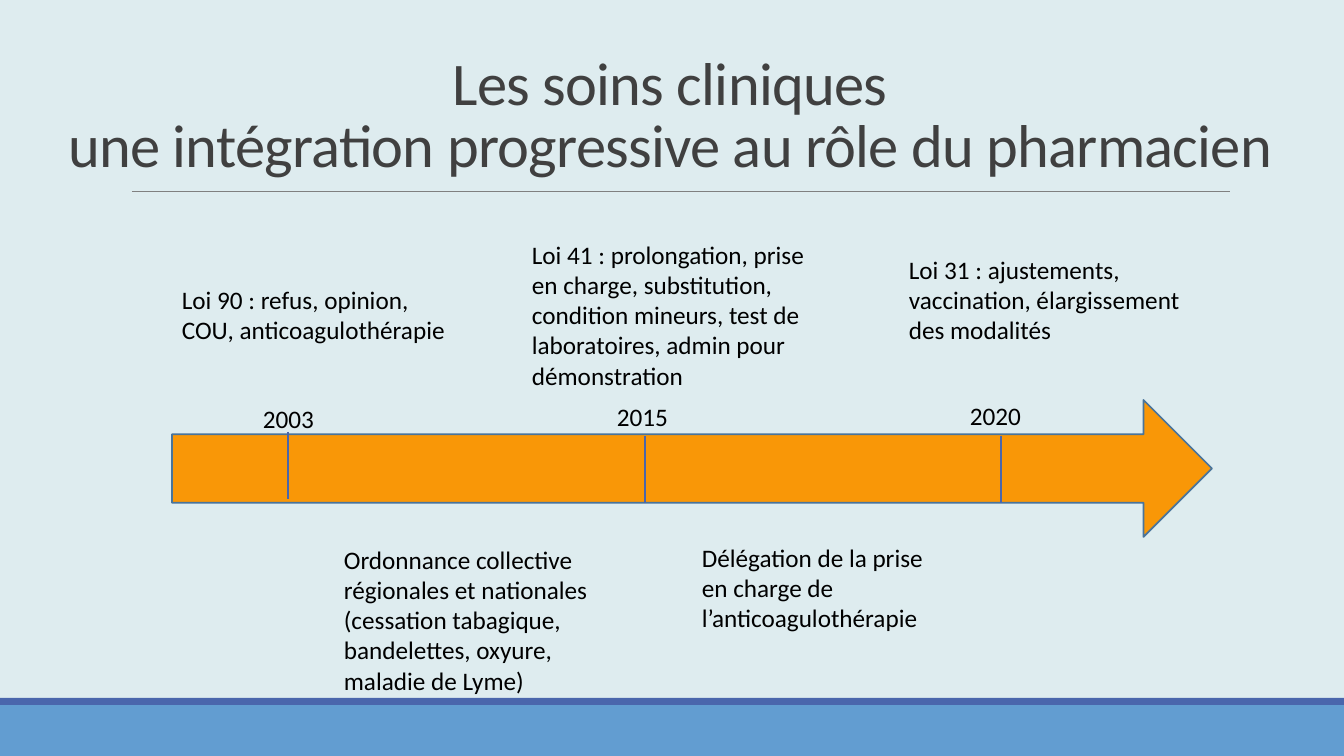
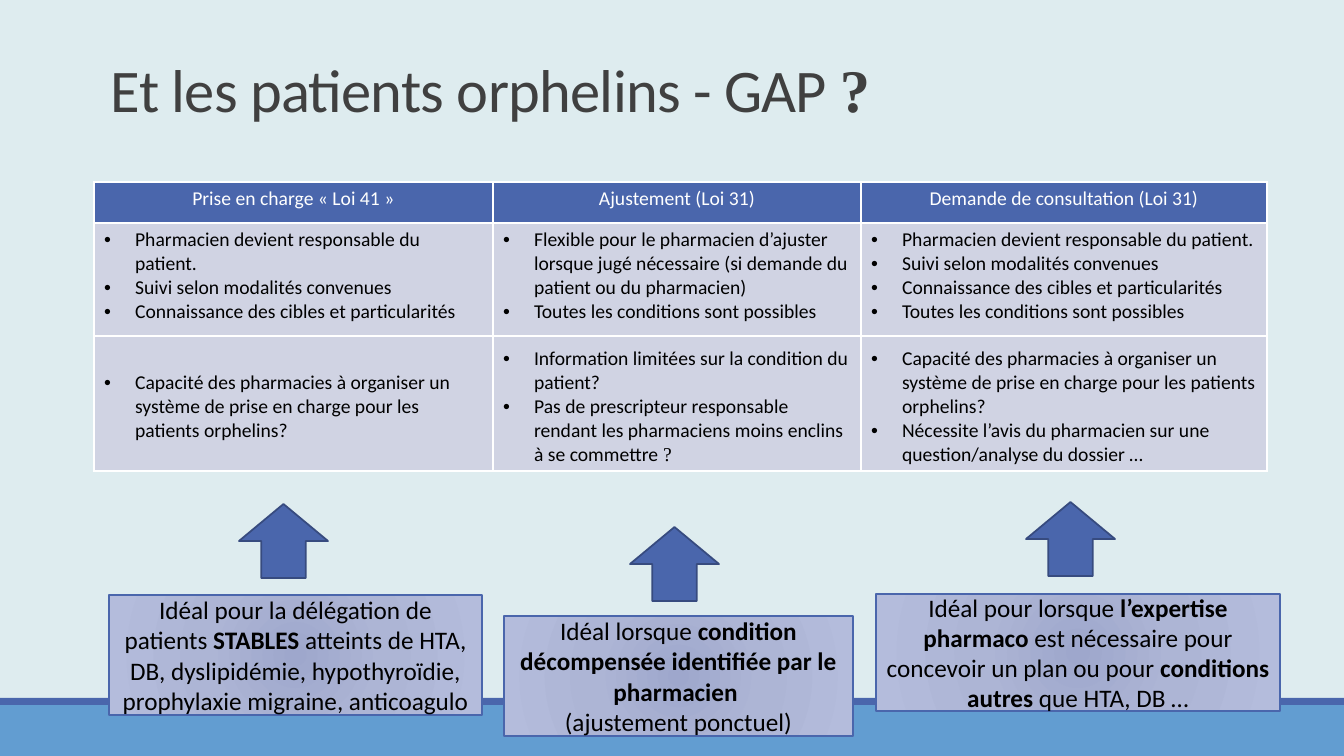
"""Build two slides on the growing clinical role of the pharmacist."""
from dataclasses import dataclass
from typing import NamedTuple

from pptx import Presentation
from pptx.dml.color import RGBColor
from pptx.enum.shapes import MSO_CONNECTOR, MSO_SHAPE
from pptx.enum.text import MSO_ANCHOR, PP_ALIGN
from pptx.oxml import parse_xml
from pptx.oxml.ns import nsdecls
from pptx.util import Emu, Pt

SCALE = 914400 / 100.8
WIDE, HIGH = 1344, 756
RECT, ROUND = MSO_SHAPE.RECTANGLE, MSO_SHAPE.ROUNDED_RECTANGLE
RIGHT, UP = MSO_SHAPE.RIGHT_ARROW, MSO_SHAPE.UP_ARROW
STRAIGHT = MSO_CONNECTOR.STRAIGHT
LEFT, MID = PP_ALIGN.LEFT, PP_ALIGN.CENTER
TOP, CENTER, BOTTOM = MSO_ANCHOR.TOP, MSO_ANCHOR.MIDDLE, MSO_ANCHOR.BOTTOM
SANS, SERIF = "Calibri", "Times New Roman"
BREAK = "\v"
INDENT = 31
BLANK = 17
HUES = {
    "back": "DEECEF", "band": "629DD1", "main": "4A66AC", "rule": "808080",
    "title": "404040", "text": "000000", "white": "FFFFFF", "cell": "D0D3E3",
    "time": "F99707", "rim": "49749B", "edge": "374B7F",
}
GLOW = ((0, "9EA7CC"), (45, "ADB5D5"), (100, "B4BCDC"))


class Box(NamedTuple):
    x: int
    y: int
    w: int
    h: int


class Run(NamedTuple):
    text: str
    bold: bool = False
    font: str = SANS


class Para(NamedTuple):
    runs: tuple
    gap: int = 0


@dataclass
class Note:
    box: Box
    text: str


@dataclass
class Year:
    text: str
    x: int
    y: int
    tick: int
    start: int


@dataclass
class Ideal:
    arrow: Box
    box: Box
    paras: tuple


@dataclass
class Column:
    width: int
    head: str
    items: tuple


NOTES = (
    Note(Box(172, 279, 299, 71), "Loi 90 : refus, opinion, COU, anticoagulothérapie"),
    Note(Box(522, 234, 299, 163), "Loi 41 : prolongation, prise en charge, substitution, "
         "condition mineurs, test de laboratoires, admin pour démonstration"),
    Note(Box(899, 249, 299, 102), "Loi 31 : ajustements, vaccination, élargissement des modalités"),
    Note(Box(334, 539, 274, 163), "Ordonnance collective régionales et nationales "
         "(cessation tabagique, bandelettes, oxyure, maladie de Lyme)"),
    Note(Box(692, 537, 254, 102), "Délégation de la prise en charge de l’anticoagulothérapie"),
)
YEARS = (
    Year("2003", 253, 398, 288, 432),
    Year("2015", 607, 396, 645, 436),
    Year("2020", 960, 395, 1001, 436),
)

OWNER = "Pharmacien devient responsable du patient."
FOLLOW = "Suivi selon modalités convenues"
KNOW = "Connaissance des cibles et particularités"
ALL = "Toutes les conditions sont possibles"
ABLE = ("Capacité des pharmacies à organiser un système de prise en charge "
        "pour les patients orphelins?")
COLUMNS = (
    Column(399, "Prise en charge « Loi 41 »",
           (OWNER, FOLLOW, KNOW, Para((Run(ABLE),), 2 * BLANK))),
    Column(368, "Ajustement (Loi 31)",
           ("Flexible pour le pharmacien d’ajuster lorsque jugé nécessaire "
            "(si demande du patient ou du pharmacien)",
            ALL,
            Para((Run("Information limitées sur la condition du patient?"),), BLANK),
            Para((Run("Pas de prescripteur responsable rendant les pharmaciens "
                      "moins enclins à se commettre"), Run(" ?", font=SERIF))))),
    Column(406, "Demande de consultation (Loi 31)",
           (OWNER, FOLLOW, KNOW, ALL, Para((Run(ABLE),), BLANK),
            "Nécessite l’avis du pharmacien sur une question/analyse du dossier …")),
)
IDEALS = (
    Ideal(Box(239, 504, 89, 74), Box(109, 595, 373, 120),
          (Para((Run("Idéal pour la délégation de patients "), Run("STABLES", True),
                 Run(" atteints de HTA, DB, dyslipidémie, hypothyroïdie, "
                     "prophylaxie migraine, anticoagulo"))),)),
    Ideal(Box(630, 527, 89, 74), Box(504, 616, 349, 120),
          (Para((Run("Idéal lorsque "),
                 Run("condition décompensée identifiée par le pharmacien ", True))),
           "(ajustement ponctuel)")),
    Ideal(Box(1026, 502, 89, 74), Box(876, 594, 404, 117),
          (Para((Run("Idéal pour lorsque "), Run("l’expertise pharmaco", True),
                 Run(" est nécessaire pour concevoir un plan ou pour "),
                 Run("conditions autres", True), Run(" que HTA, DB …"))),)),
)


def px(size: int) -> Emu:
    return Emu(round(size * SCALE))


def rgb(hue: str) -> RGBColor:
    return RGBColor.from_string(HUES[hue])


def place(box: Box) -> tuple:
    return tuple(px(side) for side in box)


def write(frame, paras, *, size=18, hue="text", align=LEFT, anchor=TOP,
          wrap=True, space=None, track=None, bullet=False) -> None:
    frame.word_wrap = wrap
    frame.vertical_anchor = anchor
    for at, para in enumerate(paras):
        if isinstance(para, str):
            para = Para((Run(para),))
        line = frame.add_paragraph() if at else frame.paragraphs[0]
        line.alignment = align
        if bullet:
            props = line._p.get_or_add_pPr()
            props.set("marL", str(px(INDENT)))
            props.set("indent", str(-px(INDENT)))
            for tag in ('buFont %s typeface="Arial"', 'buChar %s char="•"'):
                props.append(parse_xml(f"<a:{tag % nsdecls('a')}/>"))
        if space:
            line.line_spacing = space
        if para.gap:
            line.space_before = Pt(para.gap)
        for run in para.runs:
            if run.text == BREAK:
                line.add_line_break()
                continue
            part = line.add_run()
            part.text = run.text
            font = part.font
            font.size, font.bold, font.name = Pt(size), run.bold, run.font
            font.color.rgb = rgb(hue)
            if track:
                part._r.get_or_add_rPr().set("spc", str(track))


def label(slide, box: Box, paras, **form) -> None:
    write(slide.shapes.add_textbox(*place(box)).text_frame, paras, **form)


def block(slide, kind, box: Box, fill: str = "", edge: str = "", width: float = 1.25):
    shape = slide.shapes.add_shape(kind, *place(box))
    shape.shadow.inherit = False
    if fill:
        shape.fill.solid()
        shape.fill.fore_color.rgb = rgb(fill)
    if edge:
        shape.line.color.rgb = rgb(edge)
        shape.line.width = Pt(width)
    else:
        shape.line.fill.background()
    return shape


def glow(shape) -> None:
    stops = "".join(f'<a:gs pos="{at * 1000}"><a:srgbClr val="{hue}"/></a:gs>'
                    for at, hue in GLOW)
    sides = " ".join(f'{side}="100000"' for side in "ltrb")
    shape.element.spPr.insert(2, parse_xml(
        f'<a:gradFill {nsdecls("a")}><a:gsLst>{stops}</a:gsLst>'
        f'<a:path path="circle"><a:fillToRect {sides}/></a:path></a:gradFill>'))


def stroke(slide, x: int, y: int, right: int, base: int, hue: str, width: float = 1) -> None:
    line = slide.shapes.add_connector(STRAIGHT, px(x), px(y), px(right), px(base))
    line.line.color.rgb = rgb(hue)
    line.line.width = Pt(width)
    line.element.spPr.append(parse_xml(f"<a:effectLst {nsdecls('a')}/>"))


def start(deck, box: Box, runs: tuple, align):
    slide = deck.slides.add_slide(deck.slide_layouts[6])
    slide.background.fill.solid()
    slide.background.fill.fore_color.rgb = rgb("back")
    block(slide, RECT, Box(0, 705, WIDE, 51), "band")
    block(slide, RECT, Box(0, 698, WIDE, 7), "main")
    label(slide, box, (Para(runs),), size=43.2, hue="title", align=align,
          anchor=BOTTOM, space=0.85, track=-50)
    return slide


def paint(cell, hue: str) -> None:
    props = cell._tc.get_or_add_tcPr()
    for side in "LRTB":
        props.append(parse_xml(
            f'<a:ln{side} {nsdecls("a")} w="{Pt(1)}"><a:solidFill>'
            f'<a:srgbClr val="{HUES["white"]}"/></a:solidFill></a:ln{side}>'))
    cell.fill.solid()
    cell.fill.fore_color.rgb = rgb(hue)


def grid(slide, x: int, y: int, rows: tuple) -> None:
    wide = sum(col.width for col in COLUMNS)
    box = Box(x, y, wide, sum(rows))
    table = slide.shapes.add_table(len(rows), len(COLUMNS), *place(box)).table
    table.first_row = table.horz_banding = False
    for row, high in zip(table.rows, rows):
        row.height = px(high)
    for at, col in enumerate(COLUMNS):
        table.columns[at].width = px(col.width)
        head, body = table.cell(0, at), table.cell(1, at)
        paint(head, "main")
        paint(body, "cell")
        write(head.text_frame, (col.head,), size=14, hue="white", align=MID)
        write(body.text_frame, col.items, size=14, bullet=True)


def care(deck) -> None:
    title = (Run("Les soins cliniques"), Run(BREAK),
             Run("une intégration progressive au rôle du pharmacien"))
    slide = start(deck, Box(41, 9, 1258, 176), title, MID)
    stroke(slide, 132, 191, 1230, 191, "rule", 0.5)
    block(slide, RIGHT, Box(172, 400, 1040, 137), "time", "rim")
    for note in NOTES:
        label(slide, note.box, (note.text,))
    for year in YEARS:
        stroke(slide, year.tick, year.start, year.tick, year.start + 67, "main")
        label(slide, Box(year.x, year.y, 77, 40), (year.text,), wrap=False)


def gap(deck) -> None:
    title = (Run("Et les patients orphelins - GAP "), Run("?", True, SERIF))
    slide = start(deck, Box(101, 69, 1142, 61), title, LEFT)
    grid(slide, 94, 182, (41, 248))
    for ideal in IDEALS:
        block(slide, UP, ideal.arrow, "main", "edge")
        panel = block(slide, ROUND, ideal.box, edge="main", width=1)
        panel.adjustments[0] = 0
        glow(panel)
        write(panel.text_frame, ideal.paras, align=MID, anchor=CENTER)
    stroke(slide, 93, 336, 1267, 336, "white")


def main() -> None:
    deck = Presentation()
    deck.slide_width, deck.slide_height = px(WIDE), px(HIGH)
    care(deck)
    gap(deck)
    deck.save("out.pptx")


if __name__ == "__main__":
    main()
